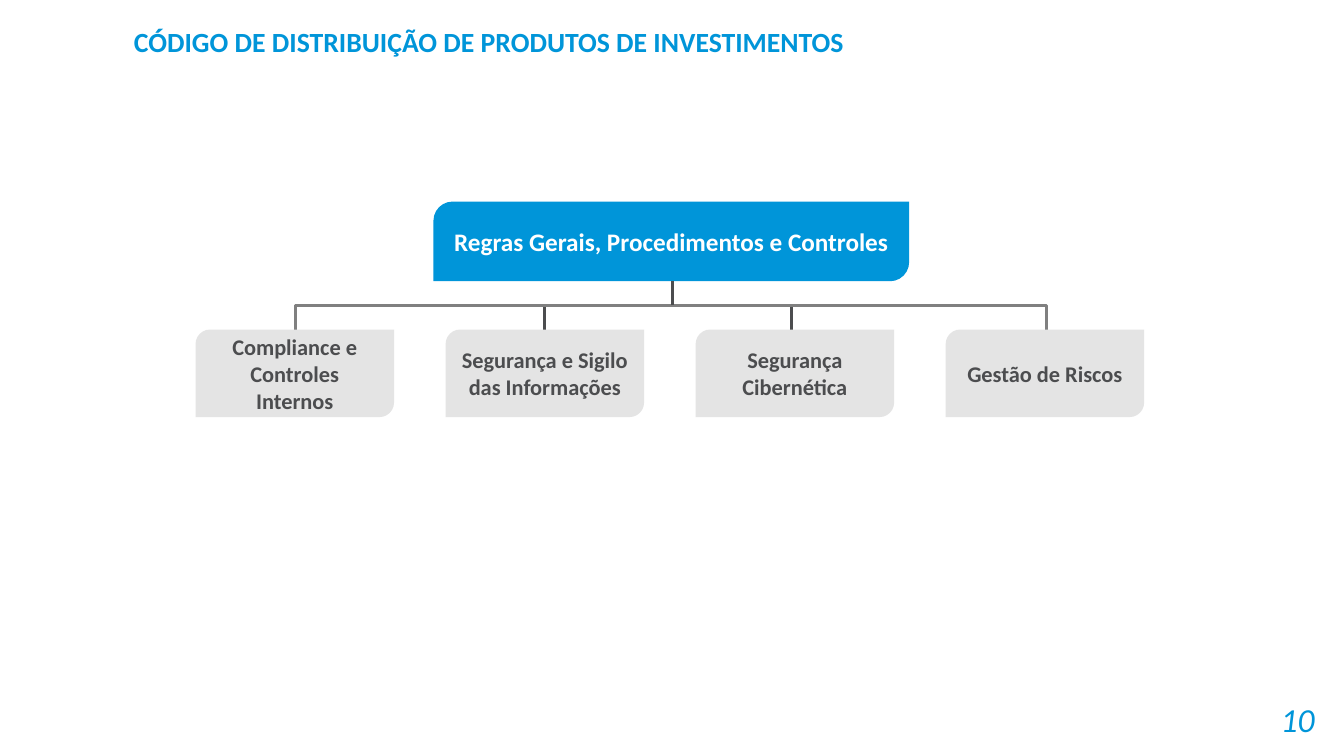
from pptx import Presentation
from pptx import util as u
from pptx.dml import color
from pptx.enum import shapes, text
from lxml import etree

BLUE, GREY, DARK, MID, WHITE = "0095D9", "E4E4E4", "4C4D4F", "808080", "FFFFFF"
TITLE = "CÓDIGO DE DISTRIBUIÇÃO DE PRODUTOS DE INVESTIMENTOS"
PAGE = "10"
ROOT = "Regras Gerais, Procedimentos e Controles"
RULES = [
    "Compliance e Controles Internos",
    "Segurança e Sigilo das Informações",
    "Segurança Cibernética",
    "Gestão de Riscos",
]
DROPS = [388.8, 565.2]
LEFT, TOP, WIDE, HIGH, STEP = 139.7, 235.4, 141.8, 62.6, 178.6
RAIL, ENDS = 218.2, (211, 747.4)
HEAD = (309.6, 144, 339.8, 56.9)
STEM = 480.2


def paint(fmt, hue):
    fmt.rgb = color.RGBColor.from_string(hue)


def write(shape, words, size, hue, align, bold=True, slant=False):
    frame = shape.text_frame
    frame.word_wrap = True
    frame.vertical_anchor = text.MSO_ANCHOR.MIDDLE
    par = frame.paragraphs[0]
    par.alignment = align
    run = par.add_run()
    run.text = words
    font = run.font
    font.name, font.size = "Calibri", u.Pt(size)
    font.bold, font.italic = bold, slant
    paint(font.color, hue)


def label(box, *style, **more):
    write(slide.shapes.add_textbox(*map(u.Pt, box)), *style, **more)


def card(box, fill, words, size, hue, round_by=None):
    shape = slide.shapes.add_shape(
        shapes.MSO_SHAPE.ROUND_2_DIAG_RECTANGLE, *map(u.Pt, box))
    shape.shadow.inherit = False
    shape.fill.solid()
    paint(shape.fill.fore_color, fill)
    shape.line.fill.background()
    if round_by:
        shape.adjustments[0] = round_by
    write(shape, words, size, hue, text.PP_ALIGN.CENTER)


def drop(x, top, end):
    line = slide.shapes.add_connector(
        shapes.MSO_CONNECTOR.STRAIGHT, *map(u.Pt, (x, top, x, end)))
    line.line.width = u.Pt(2)
    paint(line.line.color, DARK)
    etree.SubElement(
        line._element.spPr,
        "{http://schemas.openxmlformats.org/drawingml/2006/main}effectLst")


def rail():
    first, last = ENDS
    pen = slide.shapes.build_freeform(u.Pt(first), u.Pt(TOP))
    turns = [(first, RAIL), (last, RAIL), (last, TOP)]
    pen.add_line_segments([(u.Pt(x), u.Pt(y)) for x, y in turns], close=False)
    shape = pen.convert_to_shape()
    shape.shadow.inherit = False
    shape.fill.background()
    shape.line.width = u.Pt(2)
    paint(shape.line.color, MID)


deck = Presentation()
deck.slide_width, deck.slide_height = u.Pt(960), u.Pt(540)
slide = deck.slides.add_slide(deck.slide_layouts[6])

for x in DROPS:
    drop(x, RAIL, TOP)
label((704.9, 499, 241.2, 28.8), PAGE, 24, BLUE, text.PP_ALIGN.RIGHT,
      bold=False, slant=True)
label((88.6, 8.6, 527.8, 41.8), TITLE, 19.8, BLUE, text.PP_ALIGN.LEFT)
card(HEAD, BLUE, ROOT, 18, WHITE, 0.24)
rail()
for i, rule in enumerate(RULES):
    card((LEFT + i * STEP, TOP, WIDE, HIGH), GREY, rule, 16, DARK)
drop(STEM, HEAD[1] + HEAD[3], RAIL)

deck.save("out.pptx")
